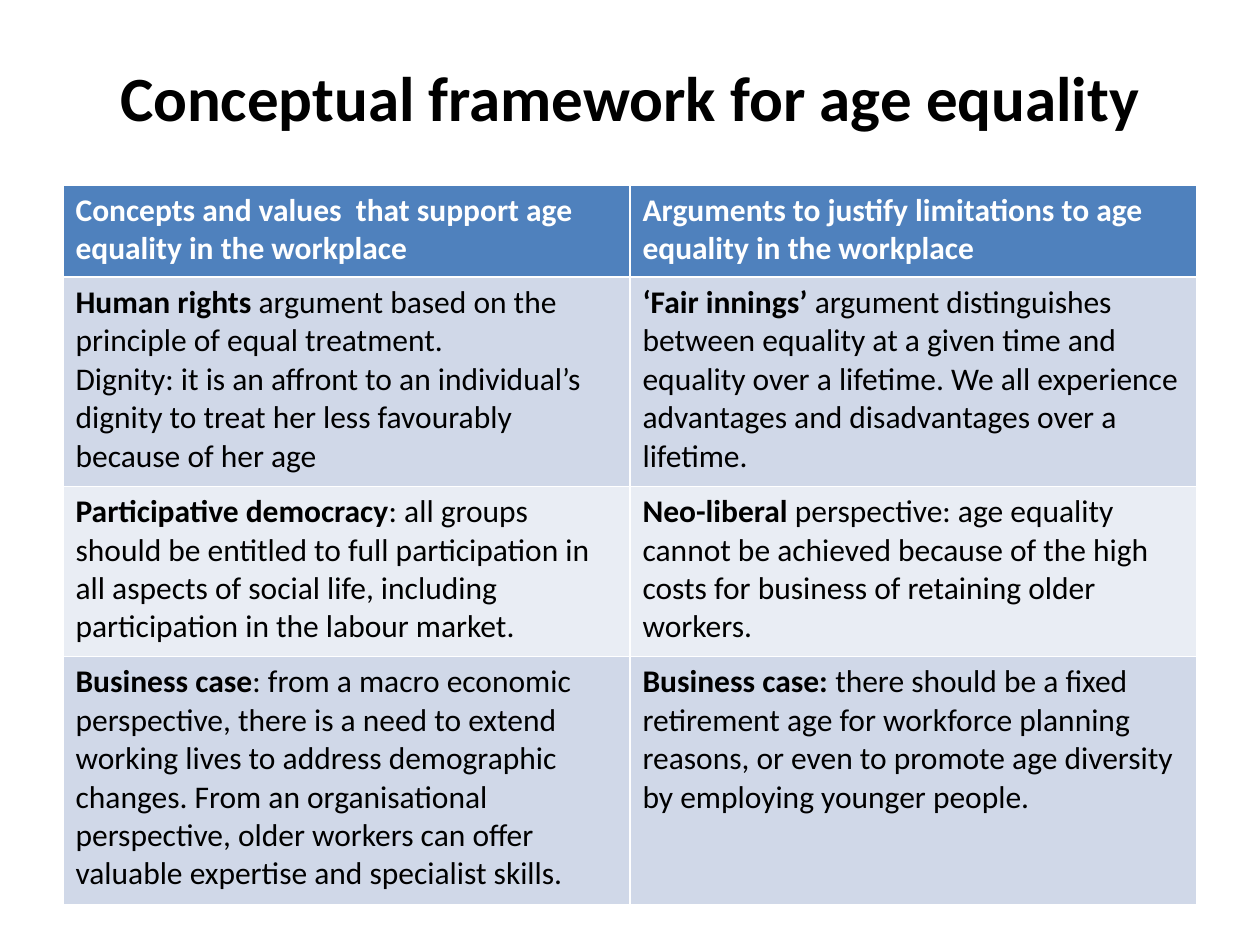
from dataclasses import dataclass

from pptx import Presentation
from pptx.dml.color import RGBColor
from pptx.enum.text import MSO_ANCHOR, PP_ALIGN
from pptx.slide import Slide
from pptx.table import _Cell
from pptx.util import Inches, Pt

FONT = "Calibri"
BLACK = RGBColor(0x00, 0x00, 0x00)
WHITE = RGBColor(0xFF, 0xFF, 0xFF)
HEADER_BLUE = RGBColor(0x4F, 0x81, 0xBD)
BAND_DARK = RGBColor(0xD0, 0xD8, 0xE8)
BAND_LIGHT = RGBColor(0xE9, 0xED, 0xF4)


@dataclass(frozen=True)
class Argument:
    lead: str
    body: str = ""
    extra: str = ""


@dataclass(frozen=True)
class Row:
    height: float
    fill: RGBColor
    color: RGBColor
    support: Argument
    limit: Argument


ROWS = [
    Row(0.73, HEADER_BLUE, WHITE,
        Argument("Concepts and values  that support age equality in the workplace"),
        Argument("Arguments to justify limitations to age equality in the workplace")),
    Row(1.66, BAND_DARK, BLACK,
        Argument("Human rights ",
                 "argument based on the principle of equal treatment.",
                 "Dignity: it is an affront to an individual’s dignity to treat her "
                 "less favourably because of her age"),
        Argument("‘Fair innings’ ",
                 "argument distinguishes between equality at a given time and equality "
                 "over a lifetime. We all experience advantages and disadvantages over "
                 "a lifetime.")),
    Row(1.35, BAND_LIGHT, BLACK,
        Argument("Participative democracy",
                 ": all groups should be entitled to full participation in all aspects "
                 "of social life, including participation in the labour market."),
        Argument("Neo-liberal ",
                 "perspective: age equality cannot be achieved because of the high "
                 "costs for business of retaining older workers.")),
    Row(1.97, BAND_DARK, BLACK,
        Argument("Business case",
                 ": from a macro economic perspective, there is a need to extend working "
                 "lives to address demographic changes. From an organisational "
                 "perspective, older workers can offer valuable expertise and "
                 "specialist skills."),
        Argument("Business case: ",
                 "there should be a fixed retirement age for workforce planning "
                 "reasons, or even to promote age diversity by employing younger "
                 "people.")),
]


def add_run(p, text: str, size: int, color: RGBColor, bold: bool) -> None:
    r = p.add_run()
    r.text = text
    r.font.name = FONT
    r.font.size = Pt(size)
    r.font.bold = bold
    r.font.color.rgb = color


def add_title(s: Slide, text: str) -> None:
    sp = s.shapes.add_textbox(Inches(0.5), Inches(0.14), Inches(9), Inches(1.25))
    tf = sp.text_frame
    tf.word_wrap = True
    tf.vertical_anchor = MSO_ANCHOR.MIDDLE
    p = tf.paragraphs[0]
    p.alignment = PP_ALIGN.CENTER
    add_run(p, text, 36, BLACK, True)


def fill_cell(cell: _Cell, argument: Argument, row: Row) -> None:
    cell.fill.solid()
    cell.fill.fore_color.rgb = row.fill
    tf = cell.text_frame
    p = tf.paragraphs[0]
    add_run(p, argument.lead, 18, row.color, True)
    if argument.body:
        add_run(p, argument.body, 18, row.color, False)
    if argument.extra:
        add_run(tf.add_paragraph(), argument.extra, 18, row.color, False)


def add_argument_table(s: Slide, rows: list[Row]) -> None:
    height = sum(row.height for row in rows)
    table = s.shapes.add_table(
        len(rows), 2, Inches(0.5), Inches(1.47), Inches(9), Inches(height)
    ).table
    for i, row in enumerate(rows):
        table.rows[i].height = Inches(row.height)
        for j, argument in enumerate((row.support, row.limit)):
            fill_cell(table.cell(i, j), argument, row)


def main() -> None:
    prs = Presentation()
    prs.slide_width = Inches(10)
    prs.slide_height = Inches(7.5)
    s = prs.slides.add_slide(prs.slide_layouts[6])
    add_title(s, "Conceptual framework for age equality")
    add_argument_table(s, ROWS)
    prs.save("out.pptx")


if __name__ == "__main__":
    main()
